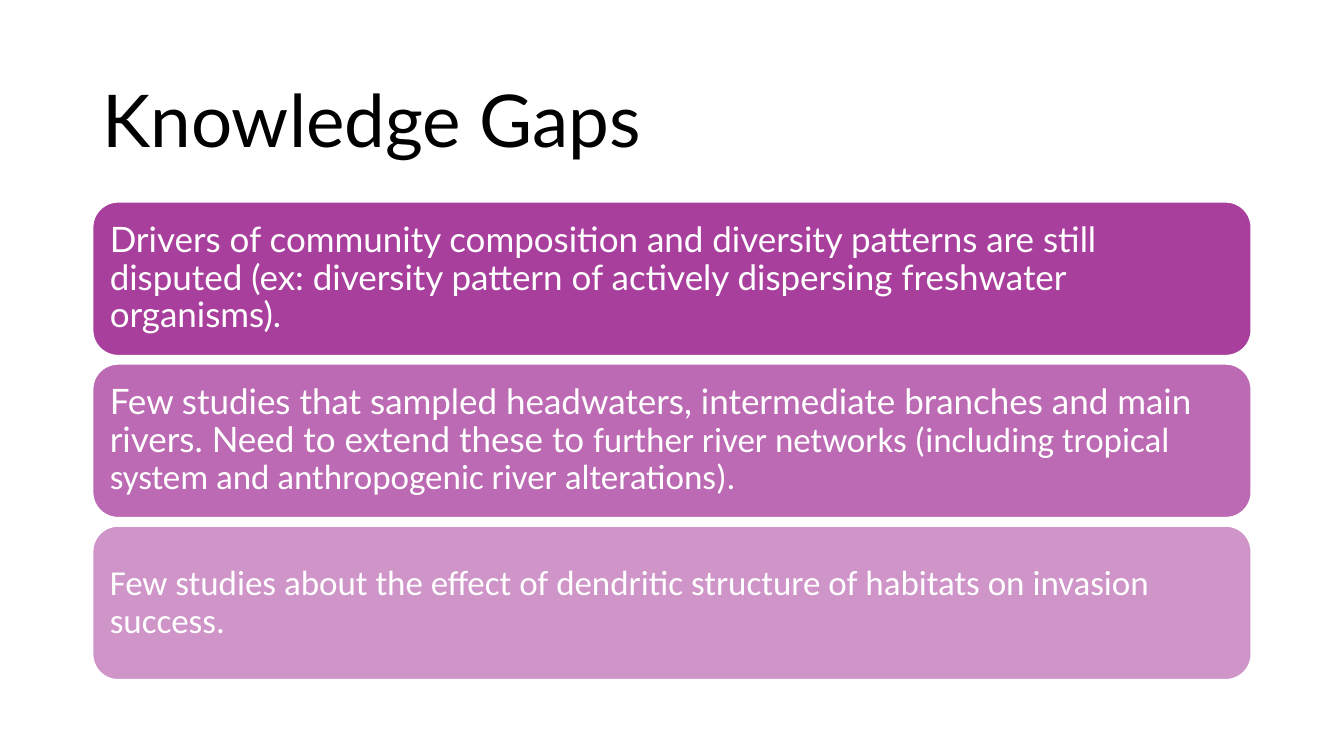
from dataclasses import dataclass

from lxml.etree import SubElement
from pptx import Presentation
from pptx.dml.color import RGBColor
from pptx.enum.shapes import MSO_SHAPE
from pptx.enum.text import MSO_ANCHOR, MSO_AUTO_SIZE, PP_ALIGN
from pptx.oxml.ns import qn
from pptx.util import Pt


@dataclass(frozen=True)
class Theme:
    ink: RGBColor = RGBColor(0x00, 0x00, 0x00)
    white: RGBColor = RGBColor(0xFF, 0xFF, 0xFF)
    purple: RGBColor = RGBColor(0xA0, 0x2B, 0x93)
    heading_font: str = "Lato"
    body_font: str = "Calibri"
    title_size: float = 52
    body_size: float = 25


@dataclass(frozen=True)
class Box:
    left: float
    top: float
    width: float
    height: float


THEME = Theme()
TITLE_BOX = Box(66, 43.75, 828, 89.25)
GAPS_BOX = Box(66, 144, 828, 341.75)
CARD_SPACING = 5.5

# Each card: opacity in percent, then its runs as (text, font).
KNOWLEDGE_GAPS = [
    (90, [("Drivers of community composition and diversity patterns are still disputed "
           "(ex: diversity pattern of actively dispersing freshwater organisms).",
           THEME.heading_font)]),
    (70, [("Few studies that sampled headwaters, intermediate branches and main rivers. "
           "Need to extend these to ", THEME.heading_font),
          ("further river networks (including tropical system and anthropogenic "
           "river alterations).", THEME.body_font)]),
    (50, [("Few studies about the effect of dendritic structure of habitats on "
           "invasion success.", THEME.body_font)]),
]


def write_text(frame, runs, *, size, color):
    """Fill a text frame with one left-aligned paragraph of (text, font) runs."""
    frame.word_wrap = True
    frame.auto_size = MSO_AUTO_SIZE.NONE
    frame.vertical_anchor = MSO_ANCHOR.MIDDLE
    para = frame.paragraphs[0]
    para.alignment = PP_ALIGN.LEFT
    para.line_spacing = 0.9
    for text, font in runs:
        span = para.add_run()
        span.text = text
        span.font.name = font
        span.font.size = Pt(size)
        span.font.color.rgb = color


def place_title(page, box, text):
    title = page.shapes.title
    title.left, title.top = Pt(box.left), Pt(box.top)
    title.width, title.height = Pt(box.width), Pt(box.height)
    write_text(title.text_frame, [(text, THEME.heading_font)],
               size=THEME.title_size, color=THEME.ink)


def add_card(page, box, opacity, runs):
    card = page.shapes.add_shape(MSO_SHAPE.ROUNDED_RECTANGLE, Pt(box.left), Pt(box.top),
                                 Pt(box.width), Pt(box.height))
    card.shadow.inherit = False
    card.fill.solid()
    card.fill.fore_color.rgb = THEME.purple
    color = card.fill._xPr.find(qn("a:solidFill")).find(qn("a:srgbClr"))
    SubElement(color, qn("a:alpha")).set("val", str(opacity * 1000))
    card.line.color.rgb = THEME.white
    card.line.width = Pt(1.5)
    frame = card.text_frame
    frame.margin_left = frame.margin_right = Pt(7.2)
    frame.margin_top = frame.margin_bottom = Pt(7.2)
    write_text(frame, runs, size=THEME.body_size, color=THEME.white)


def add_card_stack(page, box, cards):
    """Stack equally high cards that fill the box."""
    height = (box.height - CARD_SPACING * (len(cards) - 1)) / len(cards)
    for index, (opacity, runs) in enumerate(cards):
        top = box.top + index * (height + CARD_SPACING)
        add_card(page, Box(box.left, top, box.width, height), opacity, runs)


def main():
    deck = Presentation()
    deck.slide_width, deck.slide_height = Pt(960), Pt(540)
    page = deck.slides.add_slide(deck.slide_layouts[5])
    place_title(page, TITLE_BOX, "Knowledge Gaps")
    add_card_stack(page, GAPS_BOX, KNOWLEDGE_GAPS)
    deck.save("out.pptx")


if __name__ == "__main__":
    main()
